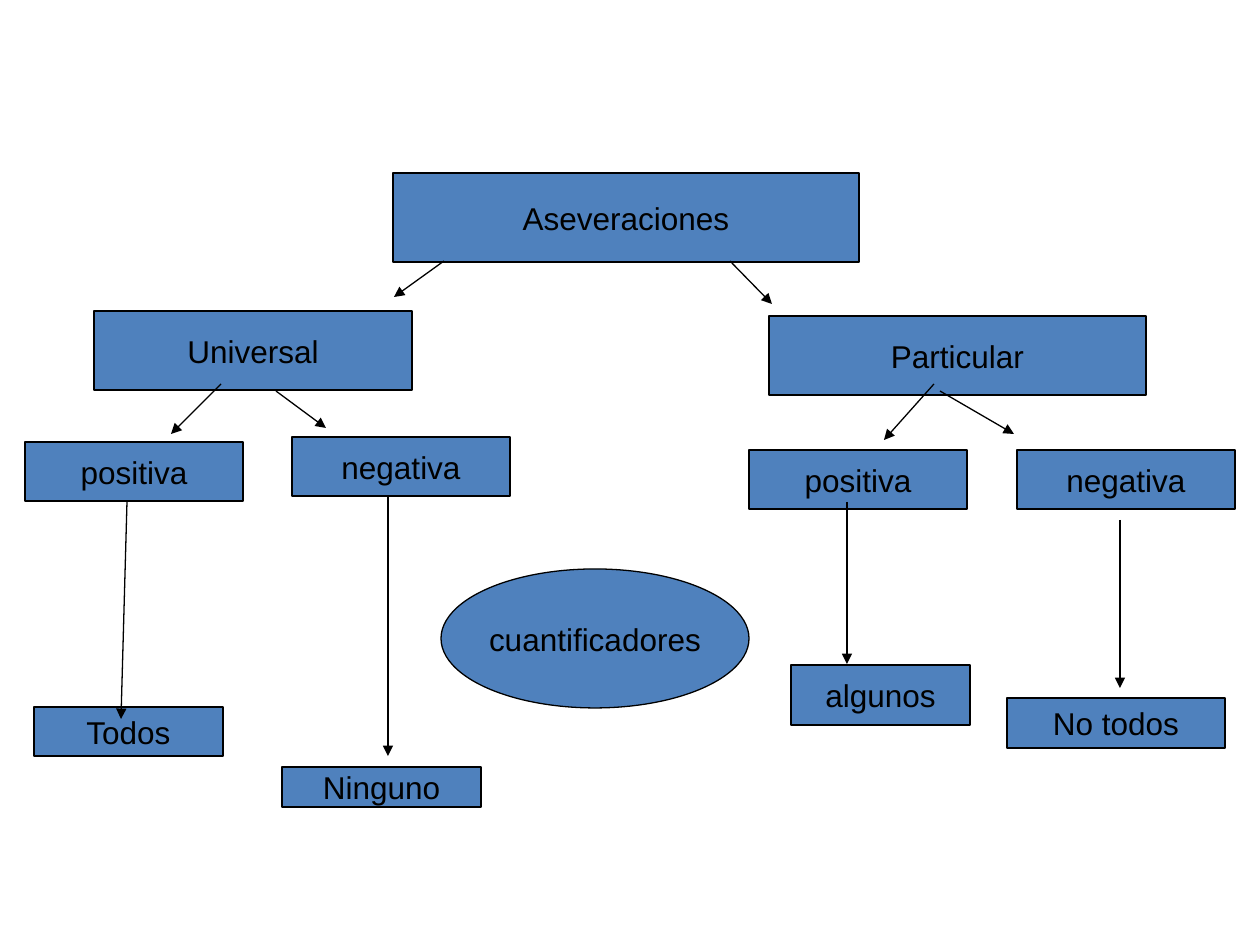
from typing import NamedTuple

from lxml.etree import SubElement
from pptx import Presentation
from pptx.dml.color import RGBColor
from pptx.enum.shapes import MSO_CONNECTOR, MSO_SHAPE
from pptx.enum.text import MSO_ANCHOR, PP_ALIGN
from pptx.oxml.ns import qn
from pptx.shapes.autoshape import Shape
from pptx.slide import Slide
from pptx.util import Emu, Inches, Pt

PX_PER_INCH = 126
COLORS = {"node": "4F81BD", "ink": "000000"}
OUTLINE = Pt(0.75)
BRANCH_SIZE = (218, 59)


class Node(NamedTuple):
    label: str
    left: int
    top: int
    width: int
    height: int
    outline: MSO_SHAPE = MSO_SHAPE.RECTANGLE


class Arrow(NamedTuple):
    start_x: int
    start_y: int
    end_x: int
    end_y: int


NODES = [
    Node("Aseveraciones", 393, 173, 466, 89),
    Node("Universal", 94, 311, 318, 79),
    Node("Particular", 769, 316, 377, 79),
    Node("positiva", 25, 442, *BRANCH_SIZE),
    Node("negativa", 292, 437, *BRANCH_SIZE),
    Node("positiva", 749, 450, *BRANCH_SIZE),
    Node("negativa", 1017, 450, *BRANCH_SIZE),
    Node("cuantificadores", 441, 569, 308, 139, MSO_SHAPE.OVAL),
    Node("Todos", 34, 707, 189, 49),
    Node("Ninguno", 282, 767, 199, 40),
    Node("algunos", 791, 665, 179, 60),
    Node("No todos", 1007, 698, 218, 50),
]

ARROWS = [
    Arrow(444, 261, 394, 297),
    Arrow(730, 261, 772, 304),
    Arrow(221, 384, 171, 434),
    Arrow(276, 391, 326, 428),
    Arrow(127, 502, 121, 719),
    Arrow(388, 496, 388, 756),
    Arrow(934, 384, 884, 440),
    Arrow(940, 391, 1014, 434),
    Arrow(847, 502, 847, 664),
    Arrow(1120, 520, 1120, 688),
]


def px(length: int) -> Emu:
    return Emu(round(length * Inches(1) / PX_PER_INCH))


def color(name: str) -> RGBColor:
    return RGBColor.from_string(COLORS[name])


def write_text(shape: Shape, text: str, *, size: int = 18, font: str = "Arial",
               ink: str = "ink") -> None:
    frame = shape.text_frame
    frame.word_wrap = False
    frame.vertical_anchor = MSO_ANCHOR.MIDDLE
    paragraph = frame.paragraphs[0]
    paragraph.alignment = PP_ALIGN.CENTER
    run = paragraph.add_run()
    run.text = text
    run.font.size = Pt(size)
    run.font.name = font
    run.font.color.rgb = color(ink)


def draw_node(slide: Slide, node: Node) -> None:
    shape = slide.shapes.add_shape(
        node.outline, px(node.left), px(node.top), px(node.width), px(node.height))
    shape.shadow.inherit = False
    shape.fill.solid()
    shape.fill.fore_color.rgb = color("node")
    shape.line.color.rgb = color("ink")
    shape.line.width = OUTLINE
    write_text(shape, node.label)


def draw_arrow(slide: Slide, arrow: Arrow) -> None:
    connector = slide.shapes.add_connector(
        MSO_CONNECTOR.STRAIGHT, *(px(length) for length in arrow))
    connector.line.color.rgb = color("ink")
    connector.line.width = OUTLINE
    properties = connector._element.spPr
    SubElement(properties.find(qn("a:ln")), qn("a:tailEnd"), type="triangle")
    SubElement(properties, qn("a:effectLst"))


def main() -> None:
    presentation = Presentation()
    presentation.slide_width = Inches(10)
    presentation.slide_height = Inches(7.5)
    slide = presentation.slides.add_slide(presentation.slide_layouts[6])
    for node in NODES:
        draw_node(slide, node)
    for arrow in ARROWS:
        draw_arrow(slide, arrow)
    presentation.save("out.pptx")


if __name__ == "__main__":
    main()
